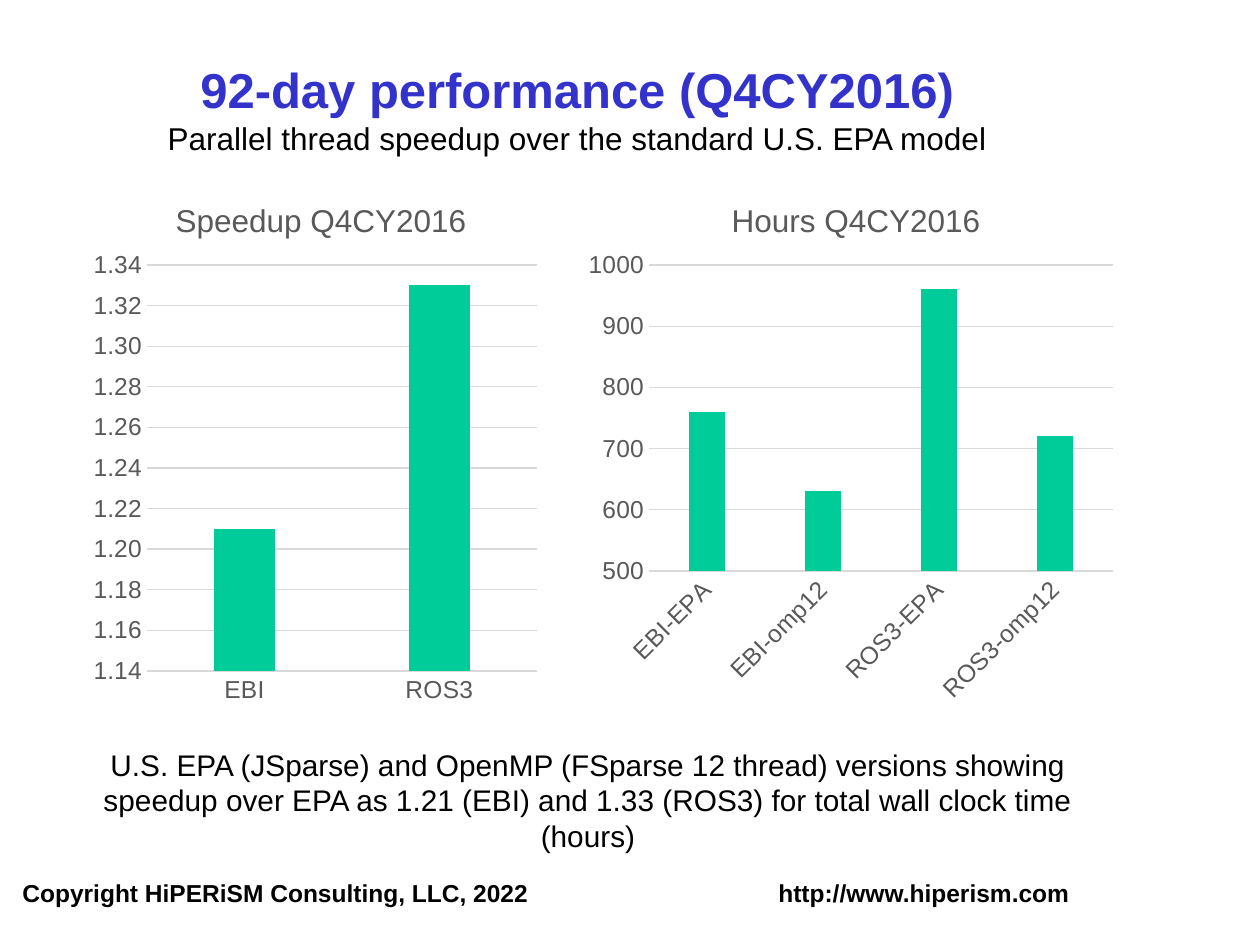
from pptx import Presentation
from pptx.chart.data import CategoryChartData as ChartData
from pptx.dml.color import RGBColor
from pptx.enum.chart import XL_CHART_TYPE as ChartType, XL_TICK_MARK as TickMark
from pptx.enum.text import MSO_ANCHOR as Anchor, MSO_AUTO_SIZE as AutoSize, PP_ALIGN as Align
from pptx.oxml import parse_xml
from pptx.oxml.ns import nsdecls, qn
from pptx.util import Emu, Pt

EMU_PER_PX = 914400 / 126
FONT = "Arial"
BLUE = RGBColor(0x33, 0x33, 0xCC)
BLACK = RGBColor(0, 0, 0)
GREEN = RGBColor(0x00, 0xCC, 0x99)
GRAY = RGBColor(0x59, 0x59, 0x59)
GRID = RGBColor(0xD9, 0xD9, 0xD9)


def px(length):
    return Emu(round(length * EMU_PER_PX))


def style(font, size, color, bold=False):
    font.name, font.size, font.bold = FONT, Pt(size), bold
    font.color.rgb = color


def move(shape, area):
    shape.left, shape.top, shape.width, shape.height = map(px, area)


def fill_placeholder(box, area, lines, anchor):
    """Each line is (text, size, color, bold) and becomes a centred paragraph."""
    move(box, area)
    frame = box.text_frame
    frame.word_wrap, frame.auto_size = True, AutoSize.NONE
    frame.vertical_anchor = anchor
    frame.text = "\n".join(line[0] for line in lines)
    for para, (_, size, color, bold) in zip(frame.paragraphs, lines):
        props = para._p.get_or_add_pPr()
        props.set("marL", "0")
        props.set("indent", "0")
        props.append(parse_xml(f"<a:buNone {nsdecls('a')}/>"))
        para.alignment, para.space_before = Align.CENTER, Pt(0)
        style(para.runs[0].font, size, color, bold)


def add_footer(page, area, text, tab):
    box = page.shapes.add_textbox(*map(px, area))
    box.text_frame.word_wrap = True
    para = box.text_frame.paragraphs[0]
    para.text = text
    para._p.get_or_add_pPr().append(parse_xml(
        f'<a:tabLst {nsdecls("a")}><a:tab pos="{px(tab)}" algn="l"/></a:tabLst>'))
    for span in para.runs:
        style(span.font, 14, BLACK, True)


def set_layout(parent, chart_area, area, target=""):
    """Fix a chart part at (left, top[, width, height]) given in slide px."""
    left, top, width, height = chart_area
    values = [(area[0] - left) / width, (area[1] - top) / height]
    if len(area) == 4:
        values += [area[2] / width, area[3] / height]
    modes = '<c:xMode val="edge"/><c:yMode val="edge"/>'
    parts = "".join(f'<c:{name} val="{value:.4f}"/>' for name, value in zip("xywh", values))
    layout = parse_xml(f"<c:layout {nsdecls('c')}><c:manualLayout>"
                       f"{target}{modes}{parts}</c:manualLayout></c:layout>")
    old = parent.find(qn("c:layout"))
    if old is None:
        parent.insert(0, layout)
    else:
        parent.replace(old, layout)


def add_columns(page, area, title, title_at, plot, values, scale, number_format, turn=0):
    data = ChartData()
    data.categories = list(values)
    data.add_series("Series 1", list(values.values()))
    chart = page.shapes.add_chart(
        ChartType.COLUMN_CLUSTERED, *map(px, area), data).chart
    style(chart.font, 10, BLACK)
    chart.has_legend = False
    chart.has_title = True
    chart.chart_title.text_frame.text = title
    style(chart.chart_title.text_frame.paragraphs[0].runs[0].font, 18, GRAY)

    # Columns
    bars = chart.plots[0]
    bars.vary_by_categories = False
    bars.gap_width, bars.overlap = 219, -27
    bars.series[0].format.fill.solid()
    bars.series[0].format.fill.fore_color.rgb = GREEN

    # Axes
    across, up = chart.category_axis, chart.value_axis
    for axis in (across, up):
        axis.major_tick_mark = axis.minor_tick_mark = TickMark.NONE
        style(axis.tick_labels.font, 14, GRAY)
    up.minimum_scale, up.maximum_scale, up.major_unit = scale
    up.tick_labels.number_format = number_format
    up.tick_labels.number_format_is_linked = False
    up.format.line.fill.background()
    up.has_major_gridlines = True
    for line in (across.format.line, up.major_gridlines.format.line):
        line.color.rgb, line.width = GRID, Pt(0.75)
    if turn:
        label_body = across._element.find(qn("c:txPr")).find(qn("a:bodyPr"))
        label_body.set("rot", str(turn * 60000))
        label_body.set("vert", "horz")

    # Places of title and plot
    set_layout(chart.chart_title._element, area, title_at)
    set_layout(chart._chartSpace.chart.plotArea, area, plot,
               '<c:layoutTarget val="inner"/>')


def main():
    deck = Presentation()
    deck.slide_width, deck.slide_height = px(1260), px(945)
    page = deck.slides.add_slide(deck.slide_layouts[1])

    # Heading and caption
    fill_placeholder(page.shapes.title, (10, 48, 1134, 120), [
        ("92-day performance (Q4CY2016)", 28, BLUE, True),
        ("Parallel thread speedup over the standard U.S. EPA model", 18, BLACK, False),
    ], Anchor.MIDDLE)
    fill_placeholder(page.placeholders[1], (42, 740, 1092, 121), [
        ("U.S. EPA (JSparse) and OpenMP (FSparse 12 thread) versions showing speedup "
         "over EPA as 1.21 (EBI) and 1.33 (ROS3) for total wall clock time (hours)",
         17, BLACK, False),
    ], Anchor.TOP)

    # Charts
    add_columns(page, (84, 168, 462, 546), "Speedup Q4CY2016", (170, 194),
                (147, 265, 390, 406), {"EBI": 1.21, "ROS3": 1.33},
                (1.14, 1.34, 0.02), "0.00")
    add_columns(page, (577, 168, 546, 546), "Hours Q4CY2016", (726, 194),
                (649, 265, 464, 306),
                {"EBI-EPA": 760, "EBI-omp12": 630, "ROS3-EPA": 960, "ROS3-omp12": 720},
                (500, 1000, 100), "General", turn=-45)

    # Footer
    add_footer(page, (10, 872, 1134, 73),
               "Copyright HiPERiSM Consulting, LLC, 2022\thttp://www.hiperism.com", 756)
    deck.save("out.pptx")


if __name__ == "__main__":
    main()
